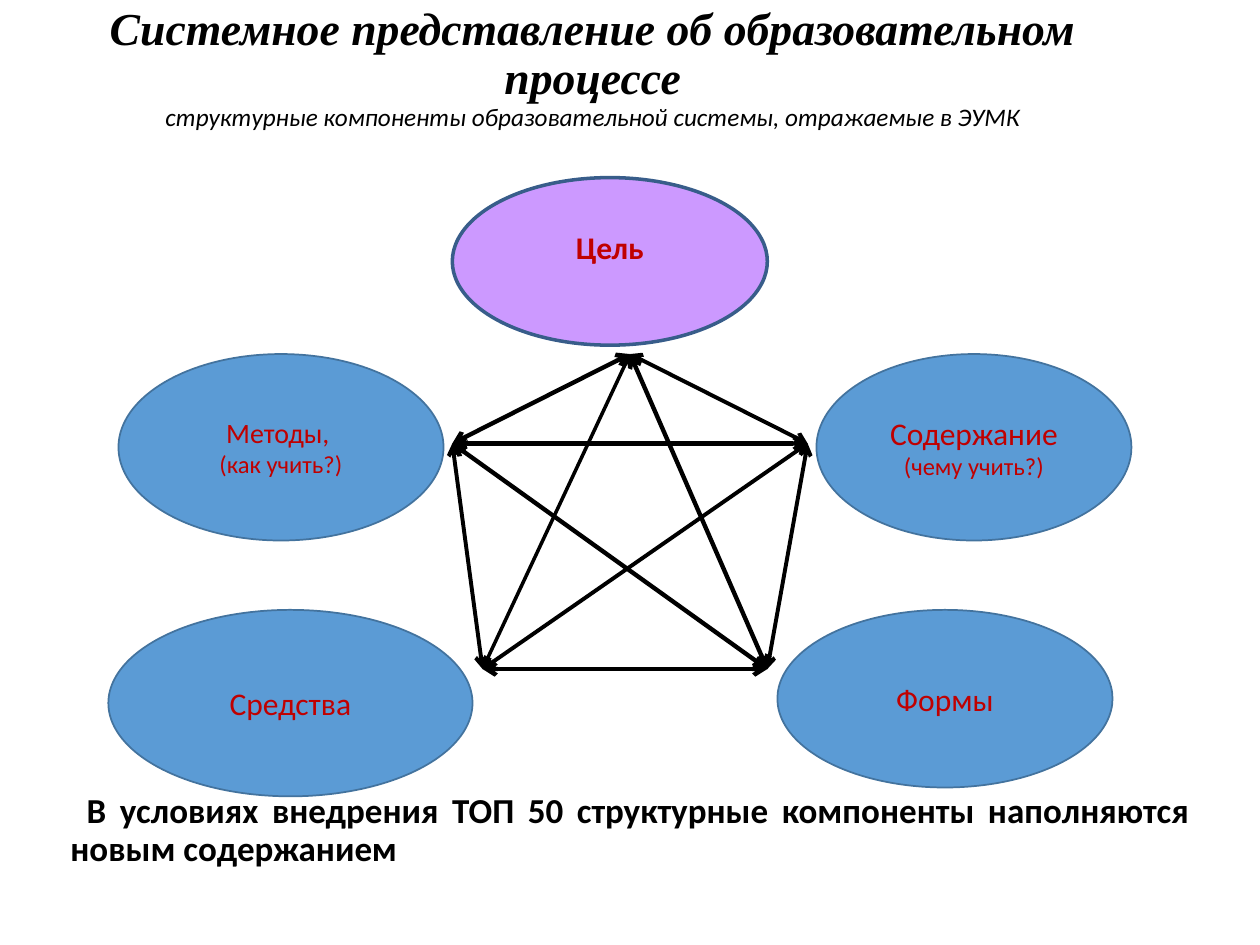
"""Builds a slide on the five linked components of the educational process."""
from lxml import etree
from pptx import Presentation
from pptx.dml.color import RGBColor
from pptx.enum.shapes import MSO_CONNECTOR, MSO_SHAPE
from pptx.enum.text import MSO_ANCHOR, PP_ALIGN
from pptx.oxml.ns import qn
from pptx.util import Inches, Pt

ELLIPSE, STRAIGHT = MSO_SHAPE.OVAL, MSO_CONNECTOR.STRAIGHT
MIDDLE, TOP = MSO_ANCHOR.MIDDLE, MSO_ANCHOR.TOP
CENTER, JUSTIFY = PP_ALIGN.CENTER, PP_ALIGN.JUSTIFY

BLACK = RGBColor(0x00, 0x00, 0x00)
RED = RGBColor(0xC0, 0x00, 0x00)
VIOLET = RGBColor(0xCC, 0x99, 0xFF)
NAVY = RGBColor(0x38, 0x5D, 0x8A)
BLUE = RGBColor(0x5B, 0x9B, 0xD5)
DARK_BLUE = RGBColor(0x43, 0x73, 0x9E)

COMPONENTS = [
    ((0.94, 2.81, 2.58, 1.48), [("Методы, ", 16), ("(как учить?)", 14)]),
    ((6.48, 2.81, 2.5, 1.48), [("Содержание", 18), ("(чему учить?)", 14)]),
    ((0.86, 4.84, 2.89, 1.48), [("Средства", 18)]),
    ((6.17, 4.84, 2.66, 1.41), [("Формы", 18)]),
]

NODES = {
    "goal": (5, 2.81),
    "methods": (3.59, 3.52),
    "content": (6.41, 3.52),
    "means": (3.83, 5.31),
    "forms": (6.09, 5.31),
}
LINKS = [
    ("means", "content", 2.25),
    ("content", "methods", 2.5),
    ("methods", "forms", 2.5),
    ("forms", "goal", 2.5),
    ("goal", "means", 2),
    ("goal", "methods", 2.5),
    ("goal", "content", 2.25),
    ("content", "forms", 2.25),
    ("forms", "means", 2.5),
    ("means", "methods", 2.25),
]


def add_paragraph(tf, text, size, color, align=CENTER, font="Calibri",
                  bold=False, italic=False, spacing=1.0):
    """Adds a formatted paragraph, using the empty first one if there is one."""
    p = tf.paragraphs[0] if not tf.text else tf.add_paragraph()
    p.text = text
    p.alignment = align
    p.line_spacing = spacing
    p.font.name = font
    p.font.size = Pt(size)
    p.font.bold = bold
    p.font.italic = italic
    p.font.color.rgb = color
    return p


def add_text_frame(s, box, anchor):
    """Adds a wrapping text box and returns its text frame."""
    tf = s.shapes.add_textbox(*map(Inches, box)).text_frame
    tf.word_wrap = True
    tf.vertical_anchor = anchor
    return tf


def add_ellipse(s, box, lines, fill=BLUE, outline=DARK_BLUE, width=1, bold=False):
    """Adds an ellipse with centred lines of text and returns its text frame."""
    sp = s.shapes.add_shape(ELLIPSE, *map(Inches, box))
    sp.shadow.inherit = False
    sp.fill.solid()
    sp.fill.fore_color.rgb = fill
    sp.line.color.rgb = outline
    sp.line.width = Pt(width)
    tf = sp.text_frame
    tf.word_wrap = True
    tf.vertical_anchor = MIDDLE
    for text, size in lines:
        add_paragraph(tf, text, size, RED, bold=bold)
    return tf


def add_double_arrow(s, start, end, width):
    """Adds a black line with an open arrowhead at both ends."""
    line = s.shapes.add_connector(STRAIGHT, *map(Inches, (*start, *end)))
    line.line.color.rgb = BLACK
    line.line.width = Pt(width)
    ln = line.line._get_or_add_ln()
    for tag in ("a:headEnd", "a:tailEnd"):
        etree.SubElement(ln, qn(tag), type="arrow")
    etree.SubElement(line._element.spPr, qn("a:effectLst"))


def main():
    """Builds and saves the slide."""
    prs = Presentation()
    prs.slide_width, prs.slide_height = Inches(10), Inches(7.5)
    s = prs.slides.add_slide(prs.slide_layouts[6])

    tf = add_text_frame(s, (0.5, 0, 8.41, 1.09), MIDDLE)
    add_paragraph(tf, "Системное представление об образовательном процессе", 26.1,
                  BLACK, font="Times New Roman", bold=True, italic=True, spacing=0.9)
    add_paragraph(tf, "структурные компоненты образовательной системы, отражаемые в ЭУМК",
                  14.4, BLACK, italic=True, spacing=0.9)

    tf = add_text_frame(s, (0.46, 6.25, 9.08, 0.75), TOP)
    p = add_paragraph(tf, "В условиях внедрения ТОП 50 структурные компоненты "
                      "наполняются новым содержанием", 20, BLACK, JUSTIFY,
                      bold=True, spacing=0.9)
    p._p.get_or_add_pPr().set("indent", str(Inches(0.13)))

    tf = add_ellipse(s, (3.59, 1.41, 2.5, 1.33), [("Цель", 18)], VIOLET, NAVY, 2, True)
    tf.margin_bottom = Inches(0.28)
    for box, lines in COMPONENTS:
        add_ellipse(s, box, lines)
    for start, end, width in LINKS:
        add_double_arrow(s, NODES[start], NODES[end], width)

    prs.save("out.pptx")


if __name__ == "__main__":
    main()
